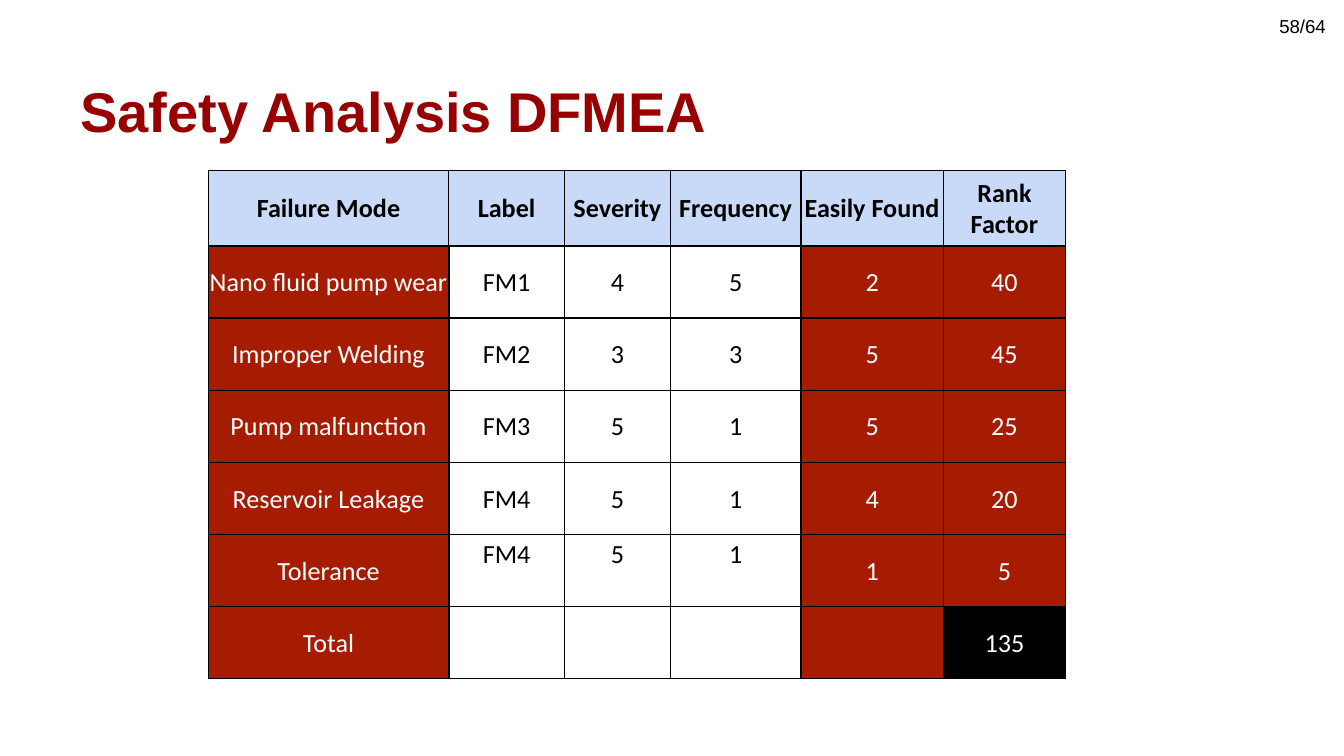
"""Build the Safety Analysis DFMEA slide with its failure mode table."""
from lxml import etree
from pptx import Presentation
from pptx.dml.color import RGBColor
from pptx.enum.text import MSO_ANCHOR, PP_ALIGN
from pptx.oxml.ns import qn
from pptx.util import Inches, Pt

TOP, MIDDLE, BOTTOM = MSO_ANCHOR.TOP, MSO_ANCHOR.MIDDLE, MSO_ANCHOR.BOTTOM
LEFT, CENTER = PP_ALIGN.LEFT, PP_ALIGN.CENTER

COLORS = {
    "title": "980000",
    "header": "C9DAF8",
    "accent": "A61C00",
    "black": "000000",
    "white": "FFFFFF",
}
TITLE = "Safety Analysis DFMEA"
PAGE = "58/64"
HEADINGS = ["Failure Mode", "Label", "Severity", "Frequency", "Easily Found", "Rank Factor"]
FAILURES = [
    ["Nano fluid pump wear", "FM1", "4", "5", "2", "40"],
    ["Improper Welding", "FM2", "3", "3", "5", "45"],
    ["Pump malfunction", "FM3", "5", "1", "5", "25"],
    ["Reservoir Leakage", "FM4", "5", "1", "4", "20"],
    ["Tolerance", "FM4", "5", "1", "1", "5"],
    ["Total", "", "", "", "", "135"],
]
ROWS = [HEADINGS] + FAILURES
TOTAL_ROW = len(ROWS) - 1
TOLERANCE_ROW = TOTAL_ROW - 1
LABEL_COL, LAST_COL = 1, len(HEADINGS) - 1
PLAIN_COLS = (1, 2, 3)

SLIDE_W = 10
SLIDE_H = SLIDE_W * 9 / 16
TABLE_LEFT, TABLE_TOP, TABLE_H, HEADER_H = 1.55, 1.27, 3.78, 0.56
COL_WIDTHS = [1.79, 0.86, 0.79, 0.97, 1.06, 0.91]
ROW_HEIGHTS = [HEADER_H] + [(TABLE_H - HEADER_H) / len(FAILURES)] * len(FAILURES)
THIN, THICK = 0.75, 1


def write(frame, text, *, size, font="Arial", color="black", bold=False, align=LEFT):
    frame.word_wrap = True
    paragraph = frame.paragraphs[0]
    paragraph.alignment = align
    run = paragraph.add_run()
    run.text = text
    run.font.size = Pt(size)
    run.font.name = font
    run.font.bold = bold
    run.font.color.rgb = RGBColor.from_string(COLORS[color])


def add_label(slide, box, margin_y, anchor, text, **text_format):
    frame = slide.shapes.add_textbox(*map(Inches, box)).text_frame
    frame.margin_left = frame.margin_right = Inches(0.1)
    frame.margin_top = frame.margin_bottom = Inches(margin_y)
    frame.vertical_anchor = anchor
    write(frame, text, **text_format)


def set_borders(cell, widths):
    properties = cell._tc.get_or_add_tcPr()
    for side, width in widths.items():
        line = etree.SubElement(properties, qn(f"a:ln{side}"), w=str(Pt(width)))
        fill = etree.SubElement(line, qn("a:solidFill"))
        etree.SubElement(fill, qn("a:srgbClr"), val=COLORS["black"])


def cell_colors(row, col):
    if row == 0:
        return "header", "black"
    if col in PLAIN_COLS:
        return "white", "black"
    if (row, col) == (TOTAL_ROW, LAST_COL):
        return "black", "white"
    return "accent", "white"


def format_cell(cell, row, col, text):
    fill, color = cell_colors(row, col)
    raised = row == TOLERANCE_ROW and col in PLAIN_COLS
    cell.margin_left = cell.margin_right = Inches(0.01)
    cell.margin_top = Inches(0.03 if raised else 0.01)
    cell.margin_bottom = 0
    cell.vertical_anchor = TOP if raised else MIDDLE
    set_borders(cell, {
        "L": THICK if row and col == LABEL_COL else THIN,
        "R": THICK if row and col == LABEL_COL - 1 else THIN,
        "T": THICK if row == 1 else THIN,
        "B": THICK if row == 0 else THIN,
    })
    cell.fill.solid()
    cell.fill.fore_color.rgb = RGBColor.from_string(COLORS[fill])
    if text:
        write(cell.text_frame, text, size=14, font="Calibri", color=color,
              bold=row == 0, align=CENTER)


def add_failure_table(slide):
    box = (TABLE_LEFT, TABLE_TOP, sum(COL_WIDTHS), TABLE_H)
    table = slide.shapes.add_table(len(ROWS), len(HEADINGS), *map(Inches, box)).table
    table.first_row = table.horz_banding = False
    for column, width in zip(table.columns, COL_WIDTHS):
        column.width = Inches(width)
    for table_row, height in zip(table.rows, ROW_HEIGHTS):
        table_row.height = Inches(height)
    for row, values in enumerate(ROWS):
        for col, text in enumerate(values):
            format_cell(table.cell(row, col), row, col, text)


def main():
    deck = Presentation()
    deck.slide_width, deck.slide_height = Inches(SLIDE_W), Inches(SLIDE_H)
    slide = deck.slides.add_slide(deck.slide_layouts[6])
    add_label(slide, (0.5, 0.23, 9, 0.94), 0.1, BOTTOM, TITLE,
              size=30, color="title", bold=True)
    add_failure_table(slide)
    add_label(slide, (9.42, 0.06, 0.55, 0.27), 0.05, TOP, PAGE, size=10)
    deck.save("out.pptx")


if __name__ == "__main__":
    main()
